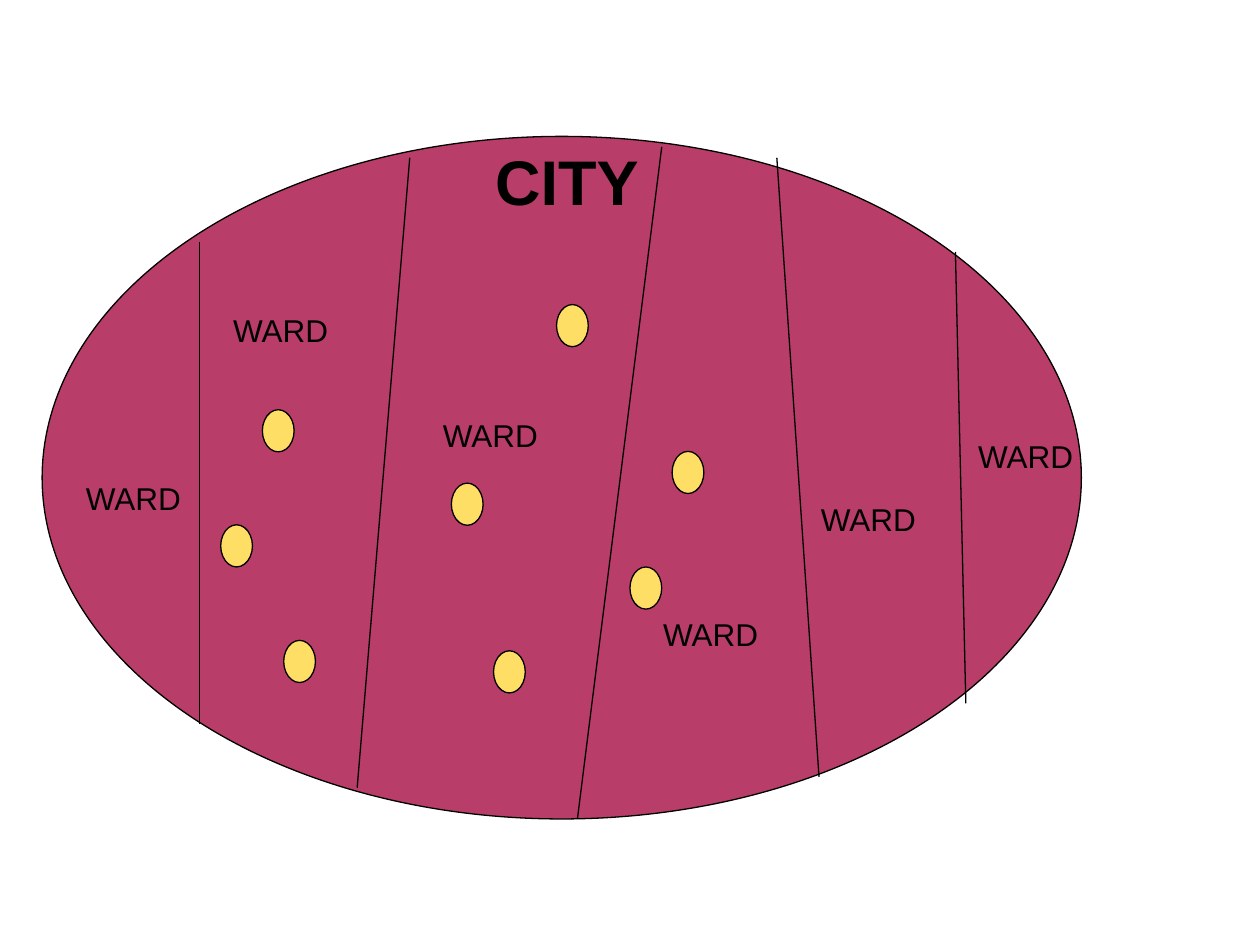
from lxml import etree
from pptx import Presentation
from pptx import util as u
from pptx.dml.color import RGBColor
from pptx.enum import shapes, text
from pptx.oxml.ns import qn

# Content: all lengths in centimetres
BLACK, CITY_FILL, SITE_FILL = "000000", "B83D68", "FFDE66"
CITY_AREA = (0.85, 2.75, 20.95, 13.76)
CITY_TITLE = (8.89, 2.75, 5.08, 1.78)
WARD_SIZE = (2.75, 1.02)
SITE_SIZE = (0.64, 0.85)

# Ward boundaries, west to east: top x, y and bottom x, y
boundaries = [
    (4.02, 4.87, 4.02, 14.6),
    (8.26, 3.18, 7.2, 15.88),
    (13.34, 2.96, 11.64, 16.51),
    (15.66, 3.18, 16.51, 15.66),
    (19.26, 5.08, 19.47, 14.18),
]
ward_corners = [(1.48, 9.53), (8.68, 8.26), (13.12, 12.28),
                (16.3, 9.95), (19.47, 8.68), (4.45, 6.14)]
site_corners = [(12.7, 11.43), (13.55, 9.1), (11.22, 6.14), (9.1, 9.74),
                (9.95, 13.12), (4.45, 10.58), (5.72, 12.91), (5.29, 8.26)]

deck = Presentation()
deck.slide_width, deck.slide_height = u.Cm(25.4), u.Cm(19.05)
slide = deck.slides.add_slide(deck.slide_layouts[6])


def color(value):
    return RGBColor.from_string(value)


def cm(lengths):
    return [u.Cm(length) for length in lengths]


def outline(part):
    part.line.color.rgb = color(BLACK)
    part.line.width = u.Pt(0.75)


def add_ellipse(box, fill):
    ellipse = slide.shapes.add_shape(shapes.MSO_SHAPE.OVAL, *cm(box))
    ellipse.shadow.inherit = False
    ellipse.fill.solid()
    ellipse.fill.fore_color.rgb = color(fill)
    outline(ellipse)


def add_label(box, wording, size, bold=False, align=text.PP_ALIGN.LEFT):
    label = slide.shapes.add_textbox(*cm(box))
    frame = label.text_frame
    frame.word_wrap = True
    frame.auto_size = text.MSO_AUTO_SIZE.SHAPE_TO_FIT_TEXT
    frame.text = wording
    paragraph = frame.paragraphs[0]
    paragraph.alignment = align
    font = paragraph.runs[0].font
    font.name, font.size, font.bold = "Arial", u.Pt(size), bold
    font.color.rgb = color(BLACK)


# City
add_ellipse(CITY_AREA, CITY_FILL)
add_label(CITY_TITLE, "CITY", 36, bold=True, align=text.PP_ALIGN.CENTER)

# Ward boundaries
for ends in boundaries:
    boundary = slide.shapes.add_connector(shapes.MSO_CONNECTOR.STRAIGHT, *cm(ends))
    outline(boundary)
    etree.SubElement(boundary._element.spPr, qn("a:effectLst"))

# Ward names
for corner in ward_corners:
    add_label(corner + WARD_SIZE, "WARD", 18)

# Sites within the wards
for corner in site_corners:
    add_ellipse(corner + SITE_SIZE, SITE_FILL)

deck.save("out.pptx")
